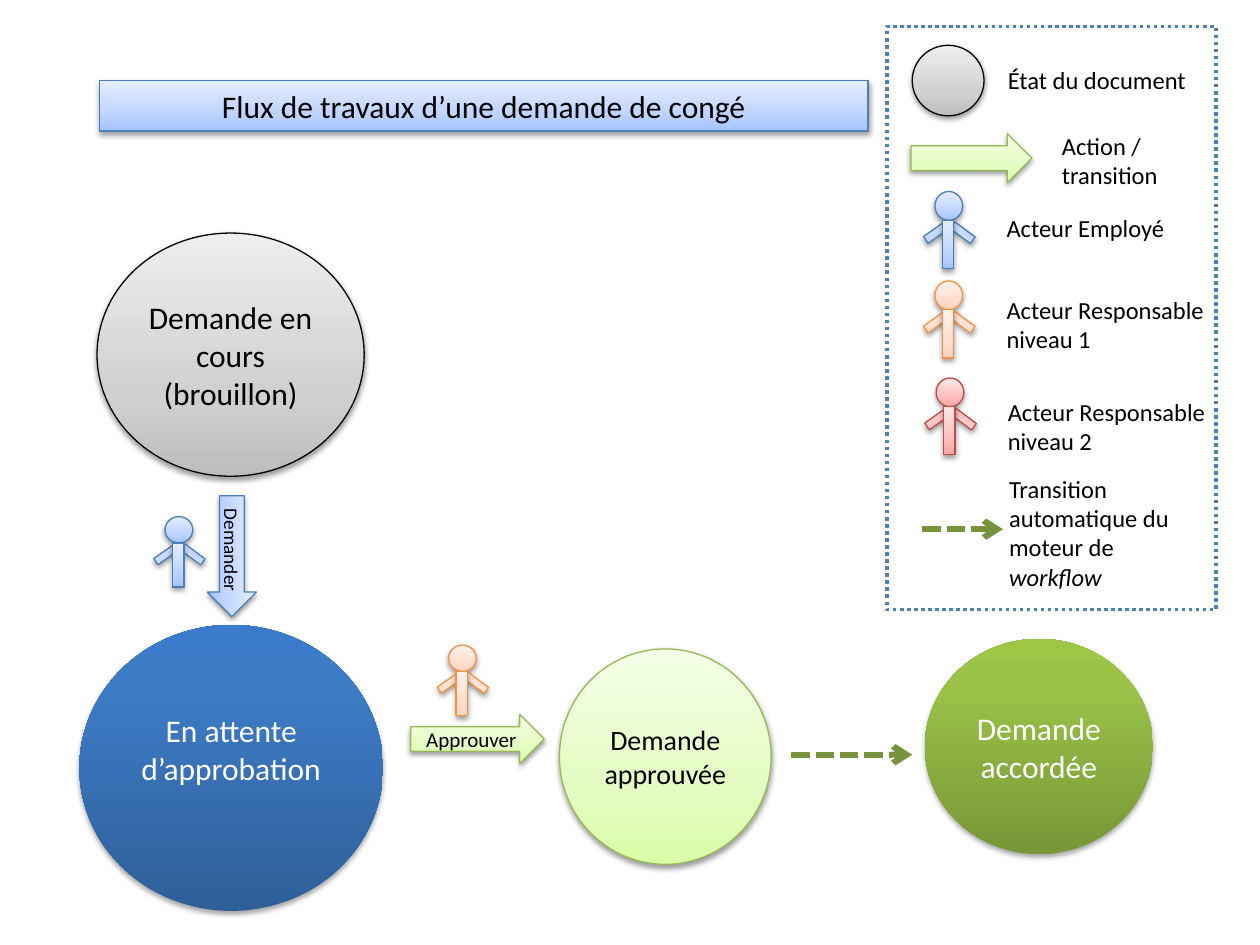
from copy import deepcopy

from lxml import etree
from pptx import Presentation
from pptx.dml.color import RGBColor
from pptx.enum.dml import MSO_LINE
from pptx.enum.shapes import MSO_CONNECTOR, MSO_SHAPE
from pptx.enum.text import MSO_ANCHOR, PP_ALIGN
from pptx.oxml import parse_xml
from pptx.oxml.ns import qn
from pptx.util import Inches, Pt

OVAL, BAR, ARROW = MSO_SHAPE.OVAL, MSO_SHAPE.RECTANGLE, MSO_SHAPE.RIGHT_ARROW
STRAIGHT = MSO_CONNECTOR.STRAIGHT
DOTS, DASHES = MSO_LINE.ROUND_DOT, MSO_LINE.SQUARE_DOT
CENTER, LEFT = PP_ALIGN.CENTER, PP_ALIGN.LEFT
MIDDLE, TOP = MSO_ANCHOR.MIDDLE, MSO_ANCHOR.TOP

COLORS = {"black": "000000", "white": "FFFFFF", "frame": "4F81BD", "auto": "77933C"}
# Gradient colours from bottom to top, middle stop, outline
THEMES = {
    "gray": (("BDBDBD", "D1D1D1", "EEEEEE"), 0.35, "000000"),
    "blue": (("A4C4FF", "BFD4FF", "E6EEFF"), 0.35, "4B7EBC"),
    "green": (("DAFDA7", "E4FCC2", "F5FFE7"), 0.35, "98B955"),
    "orange": (("FFD2BD", "FFDED0", "FFF2ED"), 0.35, "F69240"),
    "red": (("FFA6A5", "FFC0BF", "FFE7E7"), 0.35, "BF4C48"),
    "deep blue": (("2F5F99", "3D7CC7", "3A7CCB"), 0.8, None),
    "deep green": (("779737", "9BC348", "9DC746"), 0.8, None),
}
SHADOW = (
    '<a:outerShdw xmlns:a="http://schemas.openxmlformats.org/drawingml/2006/main" '
    'blurRad="39370" dist="{dist}" dir="5400000" rotWithShape="0">'
    '<a:srgbClr val="000000"><a:alpha val="{alpha}"/></a:srgbClr></a:outerShdw>'
)


def add_shaded(parent, kind, at, theme, rotation=0):
    colors, middle, outline = THEMES[theme]
    shape = parent.add_shape(kind, *(Inches(value) for value in at))
    shape.rotation = rotation
    shape.fill.gradient()
    shape.fill.gradient_angle = 90
    stop_list = shape._element.spPr.find(".//" + qn("a:gsLst"))
    stop_list.insert(1, deepcopy(stop_list[0]))
    for stop, color, position in zip(shape.fill.gradient_stops, colors, (0, middle, 1)):
        stop.color.rgb = RGBColor.from_string(color)
        stop.position = position
    if outline:
        shape.line.color.rgb = RGBColor.from_string(outline)
        shape.line.width = Pt(0.75)
    else:
        shape.line.fill.background()
    shape.shadow.inherit = False
    dist, alpha = (20320, 38000) if outline else (22860, 35000)
    effects = shape._element.spPr.find(qn("a:effectLst"))
    effects.append(parse_xml(SHADOW.format(dist=dist, alpha=alpha)))
    return shape


def write(shape, lines, size, color="black", align=CENTER, anchor=MIDDLE, wrap=True):
    frame = shape.text_frame
    for name, value in {"word_wrap": wrap, "vertical_anchor": anchor}.items():
        setattr(frame, name, value)
    for index, line in enumerate(lines):
        para = frame.paragraphs[0] if index == 0 else frame.add_paragraph()
        para.alignment = align
        para.text = line
        for span in para.runs:
            for name, value in {"name": "Calibri", "size": Pt(size)}.items():
                setattr(span.font, name, value)
            span.font.color.rgb = RGBColor.from_string(COLORS[color])
    return frame


deck = Presentation()
deck.slide_width, deck.slide_height = Inches(10), Inches(7.5)
page = deck.slides.add_slide(deck.slide_layouts[6])
shapes = page.shapes

# Document states
states = [
    ((0.77, 1.85, 2.12, 1.93), "gray", ["Demande en cours", "(brouillon)"], 18, "black"),
    ((0.63, 4.96, 2.41, 2.27), "deep blue", ["En attente d’approbation"], 18, "white"),
    ((7.34, 5.07, 1.81, 1.71), "deep green", ["Demande accordée"], 18, "white"),
    ((4.44, 5.15, 1.68, 1.71), "green", ["Demande approuvée"], 16, "black"),
]
for at, theme, lines, size, color in states:
    frame = write(add_shaded(shapes, OVAL, at, theme), lines, size, color)
    if theme == "deep blue":
        frame.margin_bottom = Inches(0.35)  # lifts the label above the centre

# Actions between states
actions = [
    ((1.36, 4.22, 0.96, 0.39), "blue", 90, "Demander", 11),
    ((3.26, 5.67, 1.06, 0.39), "green", 0, "Approuver", 12),
]
for at, theme, rotation, label, size in actions:
    write(add_shaded(shapes, ARROW, at, theme, rotation), [label], size, wrap=False)

# Actors: head position, colour and vertical stretch
actors = [
    (1.31, 4.1, "blue", 1),
    (3.56, 5.12, "orange", 1),
    (7.42, 1.52, "blue", 1.09),
    (7.42, 2.23, "orange", 1.09),
    (7.43, 3, "red", 1.09),
]
limbs = [
    (OVAL, 0, 0, 0.22, 0.21, 0),
    (BAR, -0.09, 0.27, 0.2, 0.06, 324.7),
    (BAR, 0.12, 0.27, 0.2, 0.06, 216.6),
    (BAR, 0.06, 0.21, 0.09, 0.35, 0),
]
for left, top, theme, stretch in actors:
    actor = shapes.add_group_shape()
    for kind, dx, dy, width, height, rotation in limbs:
        at = (left + dx, top + dy * stretch, width, height * stretch)
        add_shaded(actor.shapes, kind, at, theme, rotation)

# Automatic transitions
for start, end, level in [(6.28, 7.24, 5.99), (7.32, 7.96, 4.2)]:
    transition = shapes.add_connector(
        STRAIGHT, Inches(start), Inches(level), Inches(end), Inches(level)
    )
    transition.line.color.rgb = RGBColor.from_string(COLORS["auto"])
    transition.line.width = Pt(3.5)
    transition.line.dash_style = DASHES
    properties = transition._element.spPr
    etree.SubElement(properties.find(qn("a:ln")), qn("a:tailEnd"), type="arrow")
    etree.SubElement(properties, qn("a:effectLst"))

# Legend frame and symbols
legend = shapes.add_shape(BAR, Inches(7.04), Inches(0.21), Inches(2.61), Inches(4.63))
legend.shadow.inherit = False
legend.fill.background()
legend.line.color.rgb = RGBColor.from_string(COLORS["frame"])
legend.line.width = Pt(2)
legend.line.dash_style = DOTS
add_shaded(shapes, OVAL, (7.24, 0.36, 0.57, 0.56), "gray")
add_shaded(shapes, ARROW, (7.23, 1.06, 0.96, 0.39), "green")

# Legend labels
labels = [
    ((7.9, 0.47, 1.63, 0.34), "État du document", False),
    ((8.33, 0.99, 0.97, 0.57), "Action / \vtransition", False),
    ((7.89, 1.64, 1.47, 0.37), "Acteur Employé", False),
    ((7.89, 2.29, 1.83, 0.63), "Acteur Responsable \vniveau 1", False),
    ((7.9, 3.1, 1.83, 0.63), "Acteur Responsable \vniveau 2", False),
    ((7.91, 3.71, 1.62, 1.04), "Transition automatique du moteur de ", True),
]
for at, label, wrap in labels:
    box = shapes.add_textbox(*(Inches(value) for value in at))
    frame = write(box, [label], 14, align=LEFT, anchor=TOP, wrap=wrap)

# The last label ends with an italic word
span = frame.paragraphs[0].add_run()
span.text = "workflow"
for name, value in {"name": "Calibri", "size": Pt(14), "italic": True}.items():
    setattr(span.font, name, value)
span.font.color.rgb = RGBColor.from_string(COLORS["black"])

# Title
title = add_shaded(shapes, BAR, (0.79, 0.64, 6.1, 0.4), "blue")
write(title, ["Flux de travaux d’une demande de congé"], 18, anchor=TOP)

deck.save("out.pptx")
